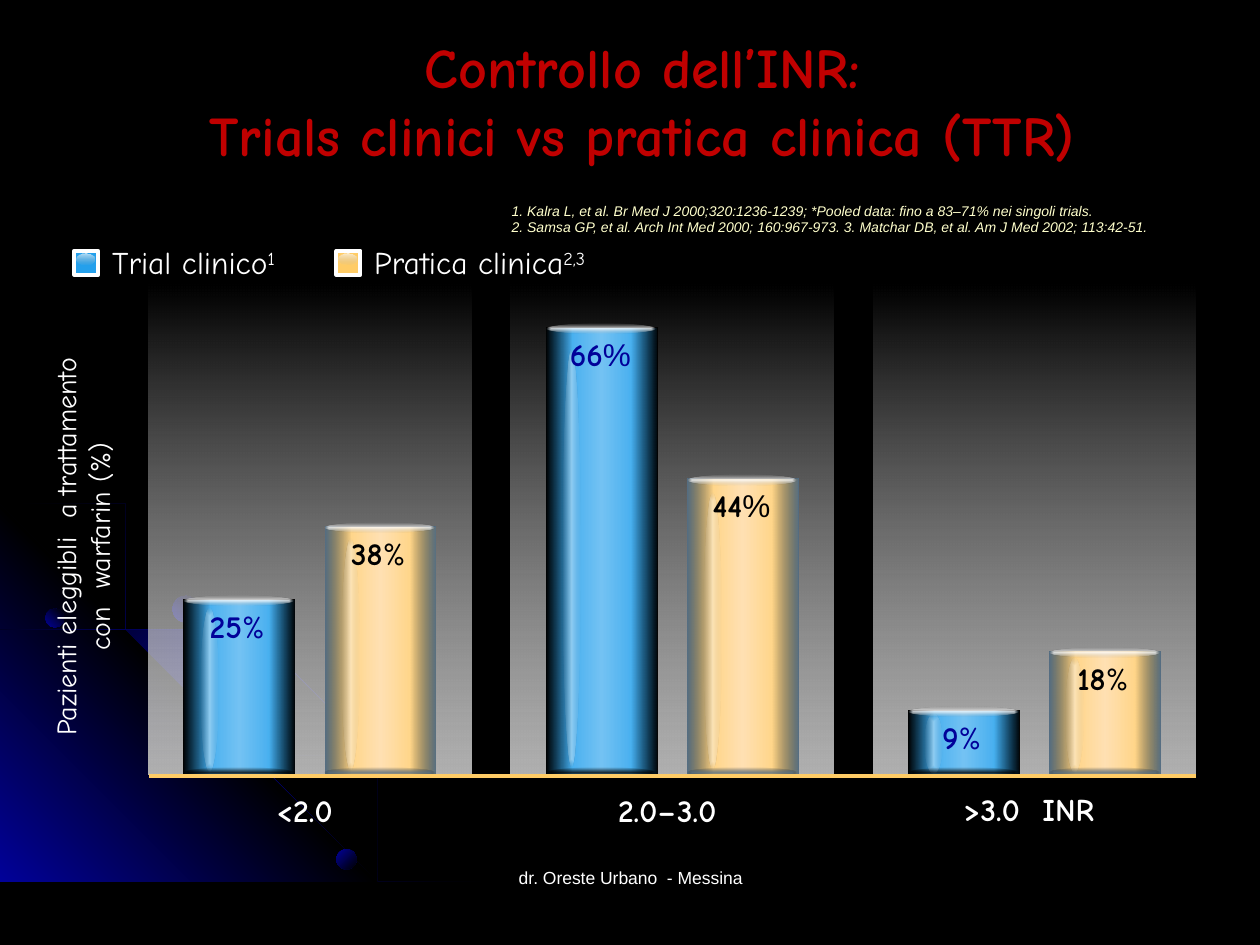
from dataclasses import dataclass

from lxml.etree import SubElement
from pptx import Presentation
from pptx.dml.color import RGBColor
from pptx.enum.shapes import MSO_CONNECTOR, MSO_SHAPE as SHAPE
from pptx.enum.text import MSO_ANCHOR as ANCHOR, PP_ALIGN as ALIGN
from pptx.oxml import parse_xml
from pptx.oxml.ns import nsdecls, qn
from pptx.util import Inches, Pt


@dataclass(frozen=True)
class Theme:
    hand: str = "Comic Neue"
    plain: str = "Arial"
    black: str = "000000"
    white: str = "FFFFFF"
    navy: str = "010199"
    title: str = "C00000"
    note: str = "FFFFCC"
    gold: str = "FFCC66"
    shine: str = "B6B6B6"
    panel: str = "B2B2B2"
    title_size: int = 32
    label_size: int = 18
    axis_size: int = 16
    footer_size: int = 10
    note_size: int = 8


@dataclass(frozen=True)
class Series:
    name: str
    refs: str
    color: str
    light: str
    shade: tuple
    label: str


T = Theme()
TRIAL = Series("Trial clinico", "1", "24A0EC", "73C2F3", (T.black, T.black), T.navy)
PRACTICE = Series("Pratica clinica", "2,3", T.gold, "FFE0B2", ("546D82", "27323C"), T.black)

BASE = 6.15
PANEL_LEFT, PANEL_PITCH, PANEL_WIDTH, PANEL_TOP = 1.18, 2.875, 2.56, 2.25
BAR_WIDTH = 0.88
BAR_OFFSETS = {TRIAL: 0.28, PRACTICE: 1.4}

# Category label, its left, top and width, font of the % sign, (value, bar top) per series
CATEGORIES = [
    ("<2.0 ", (2.12, 6.28, 0.68), T.hand, {TRIAL: (25, 4.76), PRACTICE: (38, 4.18)}),
    ("2.0–3.0 ", (4.81, 6.28, 1.06), T.plain, {TRIAL: (66, 2.6), PRACTICE: (44, 3.8)}),
    (">3.0  INR ", (7.51, 6.27, 1.4), T.hand, {TRIAL: (9, 5.64), PRACTICE: (18, 5.17)}),
]

# Upper edges of the background ribbons
RIBBONS = [
    [(0, 4.35), (0.28, 4.41), (0.57, 4.47), (0.98, 4.59), (1.36, 4.77), (1.74, 4.97),
     (2.09, 5.21), (2.42, 5.48), (2.72, 5.78), (3, 6.11), (3.25, 6.48), (3.39, 6.73),
     (3.52, 6.98), (3.62, 7.23), (3.72, 7.49)],
    [(0, 4.75), (0.41, 4.88), (0.79, 5.05), (1.17, 5.26), (1.52, 5.49), (1.84, 5.76),
     (2.15, 6.06), (2.42, 6.4), (2.66, 6.76), (2.86, 7.12), (2.96, 7.3), (3.03, 7.49)],
    [(0, 4.42), (0.39, 4.55), (0.76, 4.73), (1.11, 4.93), (1.44, 5.16), (1.75, 5.43),
     (2.04, 5.73), (2.29, 6.03), (2.54, 6.39), (2.69, 6.65), (2.82, 6.93), (2.94, 7.2),
     (3.03, 7.49)],
]
RIBBON_WIDTH = 0.02
DOTS = [(0.36, 4.83, 0.15, 315), (2.67, 6.74, 0.16, 45), (1.37, 4.73, 0.21, 315)]


def rgb(color):
    return RGBColor.from_string(color)


def paint(sp, stops, angle=None):
    """Gradient of (position, colour, opacity) stops; without an angle it runs from the centre."""
    sp.shadow.inherit = False
    sp.line.fill.background()
    sp.fill.solid()
    grad = parse_xml(f'<a:gradFill rotWithShape="1" {nsdecls("a")}><a:gsLst/></a:gradFill>')
    for pos, color, opacity in stops:
        gs = SubElement(grad[0], qn("a:gs"), pos=str(pos * 1000))
        clr = SubElement(gs, qn("a:srgbClr"), val=color)
        if opacity < 100:
            SubElement(clr, qn("a:alpha"), val=str(opacity * 1000))
    if angle is None:
        path = SubElement(grad, qn("a:path"), path="shape")
        SubElement(path, qn("a:fillToRect"), dict.fromkeys("ltrb", "50000"))
    else:
        SubElement(grad, qn("a:lin"), ang=str(angle * 60000), scaled="0")
    solid = sp._element.spPr.find(qn("a:solidFill"))
    solid.getparent().replace(solid, grad)


def add_shape(shapes, kind, box, stops, angle=None):
    sp = shapes.add_shape(kind, *map(Inches, box))
    paint(sp, stops, angle)
    return sp


def add_outline(shapes, points, stops, angle):
    builder = shapes.build_freeform(*points[0], scale=Inches(1))
    builder.add_line_segments(points[1:])
    paint(builder.convert_to_shape(), stops, angle)


def add_text(shapes, box, text, size, color, font=T.hand, bold=None, italic=None,
             align=ALIGN.CENTER, anchor=ANCHOR.TOP, wrap=False, inset=0):
    sp = shapes.add_textbox(*map(Inches, box))
    tf = sp.text_frame
    tf.word_wrap, tf.vertical_anchor = wrap, anchor
    tf.margin_left = tf.margin_right = Inches(inset)
    tf.margin_top = tf.margin_bottom = Inches(inset / 2)
    p = tf.paragraphs[0]
    p.text, p.alignment = text, align
    p.font.name, p.font.size, p.font.color.rgb = font, Pt(size), rgb(color)
    p.font.bold, p.font.italic = bold, italic
    return sp


def add_backdrop(shapes):
    band = [(0, T.black, 100), (50, T.navy, 100), (100, T.black, 100)]
    glow = [(0, T.navy, 100), (50, T.black, 100), (100, T.navy, 100)]
    add_outline(shapes, [(0, 4.27), (3.22, 7.49), (0, 7.49)], glow, 315)
    for upper in RIBBONS:
        last = len(upper) - 1
        lower = [(x - RIBBON_WIDTH * i / last, y + RIBBON_WIDTH * (1 - i / last))
                 for i, (x, y) in enumerate(upper)]
        add_outline(shapes, upper + lower[::-1], band, 45)
    for x, y, d, angle in DOTS:
        add_shape(shapes, SHAPE.OVAL, (x, y, d, d),
                  [(0, T.navy, 100), (100, T.black, 100)], angle)


def add_cylinder(shapes, series, left, top, value, percent_font):
    height = BASE - top
    dark, fade = series.shade
    add_shape(shapes, SHAPE.RECTANGLE, (left, top, BAR_WIDTH, height),
              [(0, series.color, 100), (50, series.light, 100), (100, series.color, 100)], 0)
    add_shape(shapes, SHAPE.RECTANGLE, (left + 0.68, top, 0.2, height),
              [(0, fade, 0), (100, dark, 100)], 0)
    add_shape(shapes, SHAPE.RECTANGLE, (left, top, 0.2, height),
              [(0, dark, 100), (100, fade, 0)], 0)
    add_shape(shapes, SHAPE.OVAL, (left, top - 0.03, 0.87, 0.08),
              [(0, T.white, 80), (100, T.shine, 0)])
    add_shape(shapes, SHAPE.OVAL, (left, 6.09, 0.87, 0.08), [(0, dark, 80), (100, fade, 0)])
    length = 0.935 * height
    gloss = (left + 0.2 - length / 2, top + 0.515 * height - 0.07, length, 0.14)
    add_shape(shapes, SHAPE.OVAL, gloss, [(0, T.white, 40), (100, T.shine, 0)]).rotation = 90

    width = 0.3 + 0.15 * len(str(value))
    sp = add_text(shapes, (left + 0.465 - width / 2, top + 0.06, width, 0.3),
                  str(value), T.label_size, series.label, bold=True)
    r = sp.text_frame.paragraphs[0].add_run()
    r.text, r.font.name, r.font.bold = "% ", percent_font, False


def add_legend_entry(shapes, series, left, text_width):
    sp = add_text(shapes, (left + 0.3, 1.93, text_width, 0.3), series.name,
                  T.label_size, T.white, align=ALIGN.LEFT)
    r = sp.text_frame.paragraphs[0].add_run()
    r.text = series.refs
    r._r.get_or_add_rPr().set("baseline", "30000")
    key = add_shape(shapes, SHAPE.RECTANGLE, (left, 1.99, 0.19, 0.19),
                    [(0, series.color, 100), (100, series.color, 100)], 0)
    key.fill.solid()
    key.fill.fore_color.rgb = rgb(series.color)
    key.line.color.rgb, key.line.width = rgb(T.white), Pt(2.25)
    add_shape(shapes, SHAPE.OVAL, (left + 0.02, 2.01, 0.14, 0.09),
              [(0, T.white, 70), (100, T.shine, 2)], 90)


def add_baseline(shapes):
    right = PANEL_LEFT + 2 * PANEL_PITCH + PANEL_WIDTH
    line = shapes.add_connector(MSO_CONNECTOR.STRAIGHT, Inches(PANEL_LEFT), Inches(6.16),
                                Inches(right), Inches(6.16))
    line.line.color.rgb, line.line.width = rgb(T.gold), Pt(2.25)
    SubElement(line._element.spPr, qn("a:effectLst"))


def main():
    prs = Presentation()
    prs.slide_width, prs.slide_height = Inches(10), Inches(7.5)
    s = prs.slides.add_slide(prs.slide_layouts[6])
    s.background.fill.solid()
    s.background.fill.fore_color.rgb = rgb(T.black)
    shapes = s.shapes

    add_backdrop(shapes.add_group_shape().shapes)
    lefts = [PANEL_LEFT + i * PANEL_PITCH for i in range(len(CATEGORIES))]
    for left in lefts:
        add_shape(shapes, SHAPE.RECTANGLE, (left, PANEL_TOP, PANEL_WIDTH, BASE - PANEL_TOP),
                  [(0, T.white, 0), (100, T.panel, 100)], 90)

    add_text(shapes, (0.56, 0.36, 9.08, 0.87),
             "Controllo dell’INR:\vTrials clinici vs pratica clinica (TTR)",
             T.title_size, T.title, bold=True, anchor=ANCHOR.MIDDLE, wrap=True, inset=0.1)
    add_text(shapes, (4.06, 1.47, 5.15, 0.4),
             "1. Kalra L, et al. Br Med J 2000;320:1236-1239; *Pooled data: fino a 83–71% "
             "nei singoli trials. \v2. Samsa GP, et al. Arch Int Med 2000; 160:967-973. "
             "3. Matchar DB, et al. Am J Med 2002; 113:42-51.",
             T.note_size, T.note, T.plain, italic=True, align=ALIGN.LEFT,
             anchor=ANCHOR.BOTTOM, wrap=True)
    add_text(shapes, (-1.04, 4.07, 3.39, 0.54),
             "Pazienti eleggibli  a trattamento con  warfarin (%)",
             T.axis_size, T.white, wrap=True).rotation = 270

    for left, (name, place, percent_font, bars) in zip(lefts, CATEGORIES):
        add_text(shapes, (*place, 0.3), name, T.label_size, T.white, bold=True)
        for series, (value, top) in bars.items():
            add_cylinder(shapes.add_group_shape().shapes, series,
                         left + BAR_OFFSETS[series], top, value, percent_font)

    add_legend_entry(shapes.add_group_shape().shapes, TRIAL, 0.59, 1.44)
    add_legend_entry(shapes.add_group_shape().shapes, PRACTICE, 2.67, 1.89)
    add_baseline(shapes)
    add_text(shapes, (3.42, 6.83, 3.17, 0.5), "dr. Oreste Urbano  - Messina",
             T.footer_size, T.white, T.plain, wrap=True, inset=0.1)
    prs.save("out.pptx")


if __name__ == "__main__":
    main()
